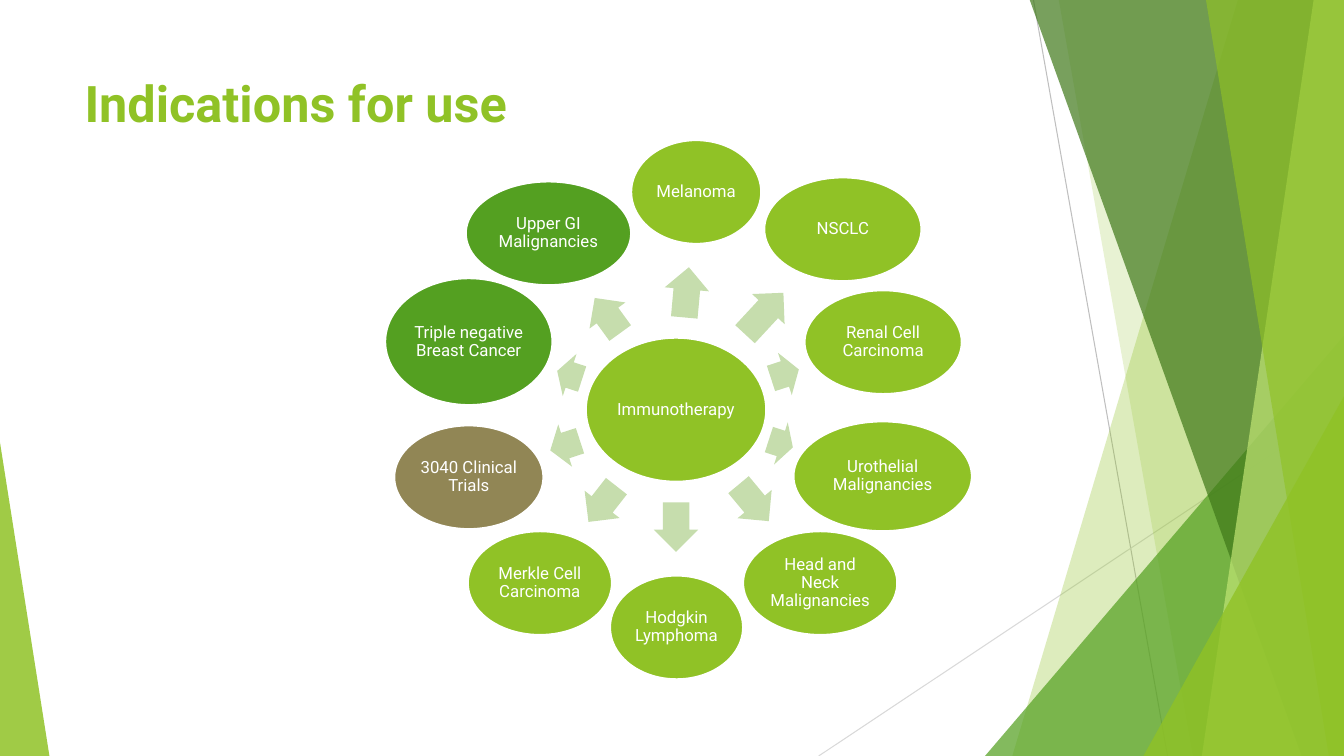
from lxml import etree
from pptx import Presentation
from pptx import util as u
from pptx.dml.color import RGBColor
from pptx.enum import shapes, text
from pptx.oxml.ns import qn

PX = 9144  # 100 px to the inch
FONT = "Roboto"
WHITE = RGBColor(0xFF, 0xFF, 0xFF)
LIME = RGBColor(0x90, 0xC2, 0x26)
GREEN = RGBColor(0x54, 0xA0, 0x21)
DARK = RGBColor(0x3F, 0x78, 0x19)
PALE = RGBColor(0xC0, 0xE4, 0x74)
OLIVE = RGBColor(0x91, 0x86, 0x55)
MINT = RGBColor(0xC6, 0xDD, 0xAD)
GREY = RGBColor(0xBF, 0xBF, 0xBF)
SILVER = RGBColor(0xD9, 0xD9, 0xD9)

deck = Presentation()
deck.slide_width, deck.slide_height = 1333 * PX, 750 * PX
slide = deck.slides.add_slide(deck.slide_layouts[6])
items = slide.shapes


def paint(shape, color, alpha=100):
    """Fill a shape without line or shadow; alpha is opacity in percent."""
    shape.shadow.inherit = False
    shape.fill.solid()
    shape.fill.fore_color.rgb = color
    shape.line.fill.background()
    if alpha < 100:
        tint = shape.fill._xPr.find(".//" + qn("a:srgbClr"))
        etree.SubElement(tint, qn("a:alpha"), val=str(alpha * 1000))


def add(kind, box):
    return items.add_shape(kind, *[n * PX for n in box])


# Thin lines behind the facets
for ends, color in [((1025, 0, 1158, 750), GREY), ((1333, 403, 812, 750), SILVER)]:
    line = items.add_connector(shapes.MSO_CONNECTOR.STRAIGHT, *[n * PX for n in ends])
    line.line.color.rgb = color
    line.line.width = u.Pt(0.75)
    etree.SubElement(line._element.spPr, qn("a:effectLst"))

# Facets: a band runs from top x to bottom x and on to the right edge,
# a triangle has a box and the place of its tip
facets = [
    ("band", (1228, 1004), LIME, 30),
    ("band", (1050, 1183), LIME, 20),
    ("tip", (977, 333, 356, 417, 1), GREEN, 72),
    ("band", (1021, 1291), DARK, 70),
    ("band", (1303, 1192), PALE, 70),
    ("band", (1196, 1318), LIME, 65),
    ("tip", (1134, 393, 199, 357, 1), LIME, 80),
    ("tip", (0, 439, 49, 311, 0), LIME, 85),
]
for kind, nums, color, alpha in facets:
    if kind == "band":
        top, foot = nums
        path = items.build_freeform(top, -1, scale=PX)
        path.add_line_segments([(1333, -1), (1333, 750), (foot, 750)], close=True)
        facet = path.convert_to_shape()
    else:
        facet = add(shapes.MSO_SHAPE.ISOSCELES_TRIANGLE, nums[:4])
        facet.adjustments[0] = nums[4]
    paint(facet, color, alpha)

# Title
title = items.add_textbox(*[n * PX for n in (74, 67, 940, 144)])
title.text_frame.word_wrap = True
head = title.text_frame.paragraphs[0]
head.text = "Indications for use"
head.font.name, head.font.size, head.font.bold = FONT, u.Pt(36), True
head.font.color.rgb = LIME

# Hub and spokes: label, colour, ellipse, arrow (left, top, width, angle)
nodes = [
    ("Immunotherapy", LIME, (581, 335, 179, 143), None),
    ("Melanoma", LIME, (626, 139, 129, 103), (656, 268, 50, 275.2)),
    ("NSCLC", LIME, (758, 176, 156, 103), (730, 289, 56, 312.8)),
    ("Renal Cell Carcinoma", LIME, (798, 288, 156, 103), (764, 349, 29, 342)),
    ("Urothelial Malignancies", LIME, (787, 418, 177, 109), (762, 418, 25, 18)),
    ("Head and Neck Malignancies", LIME, (737, 527, 153, 103), (724, 477, 47, 50.3)),
    ("Hodgkin Lymphoma", LIME, (605, 571, 132, 103), (646, 501, 49, 90)),
    ("Merkle Cell Carcinoma", LIME, (464, 527, 143, 103), (575, 478, 45, 128)),
    ("3040 Clinical Trials", OLIVE, (391, 422, 148, 103), (545, 420, 31, 162)),
    ("Triple negative Breast Cancer", GREEN, (382, 276, 166, 126), (552, 350, 26, 198)),
    ("Upper GI Malignancies", GREEN, (462, 180, 164, 103), (581, 291, 43, 234)),
]
for label, color, box, spoke in nodes:
    if spoke:
        left, top, width, angle = spoke
        arrow = add(shapes.MSO_SHAPE.RIGHT_ARROW, (left, top, width, 44))
        arrow.adjustments[0], arrow.adjustments[1] = 0.6, 0.5
        arrow.rotation = angle
        paint(arrow, MINT)
    oval = add(shapes.MSO_SHAPE.OVAL, box)
    paint(oval, color)
    oval.line.color.rgb = WHITE
    oval.line.width = u.Pt(1.5)
    frame = oval.text_frame
    frame.word_wrap = True
    frame.vertical_anchor = text.MSO_ANCHOR.MIDDLE
    frame.margin_left = frame.margin_right = 2 * PX
    frame.margin_top = frame.margin_bottom = 2 * PX
    para = frame.paragraphs[0]
    para.text = label
    para.alignment = text.PP_ALIGN.CENTER
    para.line_spacing = 0.9
    para.font.name, para.font.size = FONT, u.Pt(12)
    para.font.color.rgb = WHITE

deck.save("out.pptx")
